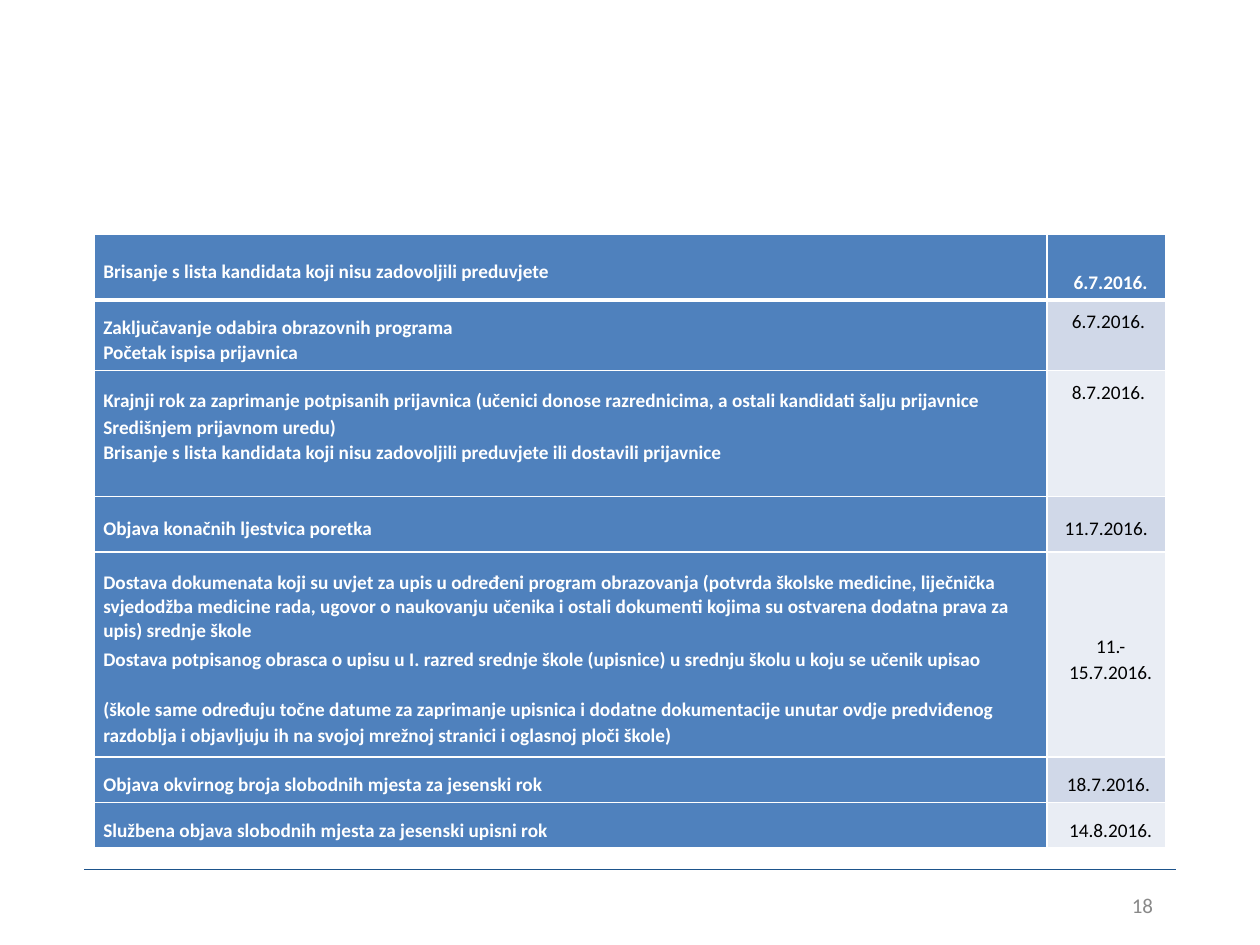
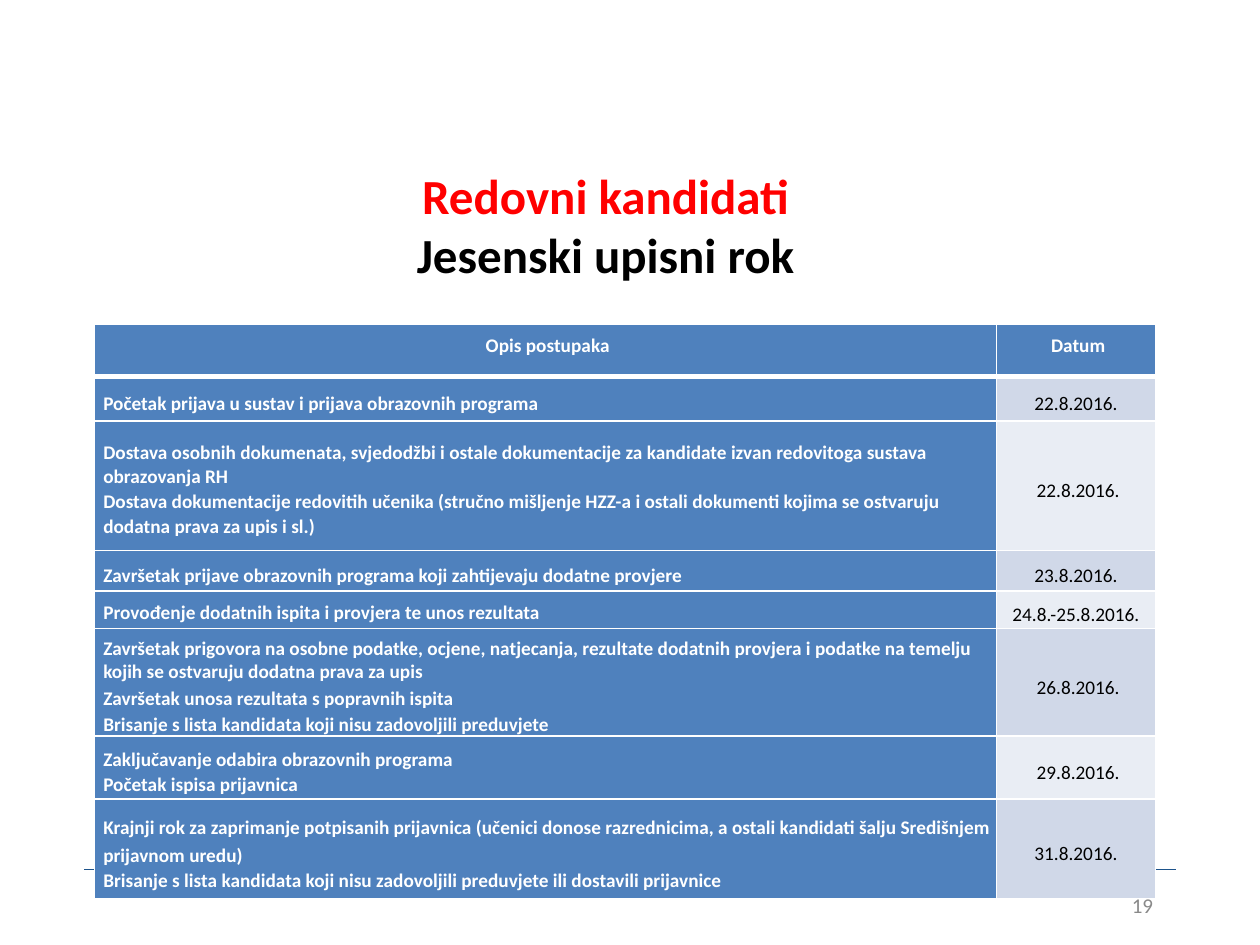
from lxml import etree
from pptx import Presentation
from pptx.dml.color import RGBColor
from pptx.enum.shapes import MSO_CONNECTOR
from pptx.enum.text import MSO_ANCHOR, MSO_AUTO_SIZE, PP_ALIGN
from pptx.oxml.ns import qn
from pptx.util import Inches, Pt

TOP, MIDDLE, BOTTOM = MSO_ANCHOR.TOP, MSO_ANCHOR.MIDDLE, MSO_ANCHOR.BOTTOM
LEFT, CENTER, RIGHT = PP_ALIGN.LEFT, PP_ALIGN.CENTER, PP_ALIGN.RIGHT
STRAIGHT = MSO_CONNECTOR.STRAIGHT
TITLE_ONLY, BLANK = 5, 6

THEME = {
    "font": "Calibri",
    "title_size": 28, "cell_size": 11, "number_size": 12,
    "red": "FF0000", "black": "000000", "white": "FFFFFF",
    "blue": "4F81BD", "bands": ("E9EDF4", "D0D8E8"),
    "rule": "1D538B", "number": "898989",
    "spacing": 1.07, "inset": 0.07, "space": 0.035,
}


def add_run(p, text, size, color, bold=False):
    r = p.add_run()
    r.text = text
    for name, value in {"name": THEME["font"], "size": Pt(size), "bold": bold}.items():
        setattr(r.font, name, value)
    r.font.color.rgb = RGBColor.from_string(color)


def fill_cell(cell, row, col, paragraphs, anchor=MIDDLE, spaces=0, bottom=0):
    tc_pr = cell._tc.get_or_add_tcPr()
    for side in ("L", "R", "T", "B"):
        thick = (row, side) in ((0, "B"), (1, "T"))
        ln = etree.SubElement(tc_pr, qn(f"a:ln{side}"), w=str(Pt(3 if thick else 1)))
        solid = etree.SubElement(ln, qn("a:solidFill"))
        etree.SubElement(solid, qn("a:srgbClr"), val=THEME["white"])
    dark = row == 0 or col == 0
    cell.fill.solid()
    cell.fill.fore_color.rgb = RGBColor.from_string(
        THEME["blue"] if dark else THEME["bands"][row % 2])
    layout = {"margin_left": Inches(THEME["inset"]), "margin_top": Inches(THEME["inset"]),
              "margin_right": Inches(spaces * THEME["space"]),
              "margin_bottom": Inches(bottom), "vertical_anchor": anchor}
    for name, value in layout.items():
        setattr(cell, name, value)
    tf = cell.text_frame
    for i, paragraph in enumerate(paragraphs):
        text, style = paragraph if isinstance(paragraph, tuple) else (paragraph, {})
        p = tf.paragraphs[0] if i == 0 else tf.add_paragraph()
        p.alignment = CENTER if col or text == "Opis postupaka" else LEFT
        p.line_spacing = style.get("line", THEME["spacing"])
        p.space_before = Pt(style.get("before", 0))
        p.space_after = Pt(style.get("after", 0))
        add_run(p, text, THEME["cell_size"], THEME["white" if dark else "black"], dark)


SUMMER_ROWS = [
    (0.52, [("Brisanje s lista kandidata koji nisu zadovoljili preduvjete",
             {"line": 0.99, "after": 2})], {},
     "6.7.2016.", {"anchor": BOTTOM, "bottom": 0.04}),
    (0.56, ["Zaključavanje odabira obrazovnih programa", "Početak ispisa prijavnica"], {},
     "6.7.2016.", {"anchor": TOP, "spaces": 1}),
    (1, [("Krajnji rok za zaprimanje potpisanih prijavnica (učenici donose razrednicima, "
          "a ostali kandidati šalju prijavnice Središnjem prijavnom uredu)", {"line": 1.15}),
         "Brisanje s lista kandidata koji nisu zadovoljili preduvjete ili dostavili prijavnice"],
     {"bottom": 0.2},
     "8.7.2016.", {"anchor": TOP, "spaces": 1}),
    (0.44, ["Objava konačnih ljestvica poretka"], {}, "11.7.2016.", {"spaces": 2}),
    (1.63, [("Dostava dokumenata koji su uvjet za upis u određeni program obrazovanja "
             "(potvrda školske medicine, liječnička svjedodžba medicine rada, ugovor o "
             "naukovanju učenika i ostali dokumenti kojima su ostvarena dodatna prava za "
             "upis) srednje škole", {"line": 1.02, "after": 1.6}),
            "Dostava potpisanog obrasca o upisu u I. razred srednje škole (upisnice) u "
            "srednju školu u koju se učenik upisao",
            ("(škole same određuju točne datume za zaprimanje upisnica i dodatne "
             "dokumentacije unutar ovdje predviđenog razdoblja i objavljuju ih na svojoj "
             "mrežnoj stranici i oglasnoj ploči škole)", {"before": 14.4})], {},
     "11.-15.7.2016.", {}),
    (0.36, ["Objava okvirnog broja slobodnih mjesta za jesenski rok"], {},
     "18.7.2016.", {"spaces": 1}),
    (0.36, ["Službena objava slobodnih mjesta za jesenski upisni rok"], {},
     "14.8.2016.", {}),
]

AUTUMN_ROWS = [
    (0.42, ["Opis postupaka"], {"anchor": TOP, "spaces": 1},
     "Datum", {"anchor": TOP, "spaces": 1}),
    (0.35, ["Početak prijava u sustav i prijava obrazovnih programa"], {},
     "22.8.2016.", {"spaces": 2}),
    (1.03, [("Dostava osobnih dokumenata, svjedodžbi i ostale dokumentacije za kandidate "
             "izvan redovitoga sustava obrazovanja RH", {"line": 0.98, "after": 0.1}),
            "Dostava dokumentacije redovitih učenika (stručno mišljenje HZZ-a i ostali "
            "dokumenti kojima se ostvaruju dodatna prava za upis i sl.)"], {},
     "22.8.2016.", {"spaces": 1}),
    (0.32, ["Završetak prijave obrazovnih programa koji zahtijevaju dodatne provjere"], {},
     "23.8.2016.", {"spaces": 2}),
    (0.3, ["Provođenje dodatnih ispita i provjera te unos rezultata"], {"anchor": TOP},
     "24.8.-25.8.2016.", {"spaces": 2}),
    (0.85, [("Završetak prigovora na osobne podatke, ocjene, natjecanja, rezultate dodatnih "
             "provjera i podatke na temelju kojih se ostvaruju dodatna prava za upis",
             {"line": 0.96, "after": 1.6}),
            "Završetak unosa rezultata s popravnih ispita",
            "Brisanje s lista kandidata koji nisu zadovoljili preduvjete"], {},
     "26.8.2016.", {"spaces": 1}),
    (0.5, ["Zaključavanje odabira obrazovnih programa", "Početak ispisa prijavnica"], {},
     "29.8.2016.", {"spaces": 1}),
    (0.79, [("Krajnji rok za zaprimanje potpisanih prijavnica (učenici donose razrednicima, "
             "a ostali kandidati šalju Središnjem prijavnom uredu)", {"line": 1.16}),
            "Brisanje s lista kandidata koji nisu zadovoljili preduvjete ili dostavili prijavnice"],
     {}, "31.8.2016.", {"spaces": 2}),
]

SLIDES = [
    {"number": "18", "title": None, "top": 1.86, "widths": (7.56, 0.94), "rows": SUMMER_ROWS},
    {"number": "19", "title": ("Redovni kandidati", "Jesenski upisni rok"),
     "top": 2.57, "widths": (7.16, 1.26), "rows": AUTUMN_ROWS},
]

prs = Presentation()
prs.slide_width, prs.slide_height = Inches(10), Inches(7.5)

for page in SLIDES:
    s = prs.slides.add_slide(prs.slide_layouts[TITLE_ONLY if page["title"] else BLANK])

    rule = s.shapes.add_connector(STRAIGHT, Inches(0.67), Inches(6.9), Inches(9.33), Inches(6.9))
    rule.line.width = Pt(0.25)
    rule.line.color.rgb = RGBColor.from_string(THEME["rule"])
    etree.SubElement(rule._element.spPr, qn("a:effectLst"))

    if page["title"]:
        title = s.shapes.title
        title.left, title.top = Inches(0.67), Inches(1.23)
        title.width, title.height = Inches(8.27), Inches(1.1)
        tf = title.text_frame
        tf.vertical_anchor, tf.auto_size = MIDDLE, MSO_AUTO_SIZE.NONE
        p = tf.paragraphs[0]
        p.alignment = CENTER
        group, term = page["title"]
        add_run(p, group, THEME["title_size"], THEME["red"], True)
        p.add_line_break()
        add_run(p, term, THEME["title_size"], THEME["black"], True)

    number = s.shapes.add_textbox(Inches(7.17), Inches(6.99), Inches(2.08), Inches(0.38))
    tf = number.text_frame
    tf.word_wrap, tf.vertical_anchor = True, MIDDLE
    p = tf.paragraphs[0]
    p.alignment = RIGHT
    add_run(p, page["number"], THEME["number_size"], THEME["number"])

    rows, widths = page["rows"], page["widths"]
    table = s.shapes.add_table(
        len(rows), len(widths), Inches(0.75), Inches(page["top"]),
        Inches(sum(widths)), Inches(sum(row[0] for row in rows))).table
    for column, width in zip(table.columns, widths):
        column.width = Inches(width)
    for i, (height, steps, step_format, date, date_format) in enumerate(rows):
        table.rows[i].height = Inches(height)
        fill_cell(table.cell(i, 0), i, 0, steps, **step_format)
        fill_cell(table.cell(i, 1), i, 1, [date], **date_format)

prs.save("out.pptx")
